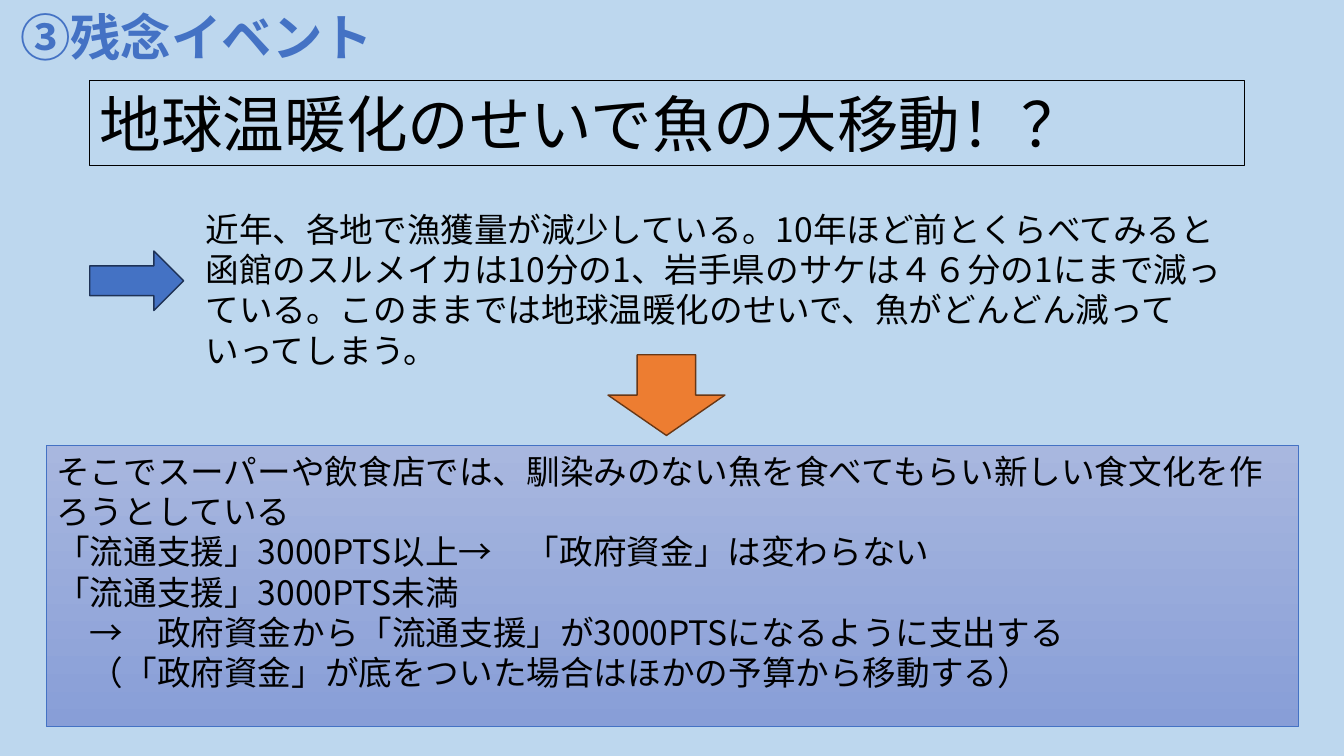
from dataclasses import dataclass

from pptx import Presentation
from pptx.dml.color import RGBColor
from pptx.enum.shapes import MSO_SHAPE
from pptx.enum.text import MSO_ANCHOR, MSO_AUTO_SIZE, PP_ALIGN
from pptx.oxml.ns import qn
from pptx.shapes.autoshape import Shape
from pptx.slide import Slide
from pptx.util import Emu, Inches, Pt

FONT = "Noto Sans CJK JP"
SLIDE_WIDTH, SLIDE_HEIGHT = Inches(13.33), Inches(7.5)
BLACK, BLUE, ORANGE, SKY = "000000", "4472C4", "ED7D31", "BDD7EE"


@dataclass(frozen=True)
class Frame:
    """A place on the slide, in percent of its width and height."""
    left: float
    top: float
    width: float
    height: float

    def lengths(self) -> tuple[Emu, Emu, Emu, Emu]:
        return (Emu(int(SLIDE_WIDTH * self.left / 100)),
                Emu(int(SLIDE_HEIGHT * self.top / 100)),
                Emu(int(SLIDE_WIDTH * self.width / 100)),
                Emu(int(SLIDE_HEIGHT * self.height / 100)))


@dataclass(frozen=True)
class Block:
    """A preset shape; fill holds no colour, one, or the two of a gradient."""
    frame: Frame
    preset: MSO_SHAPE = MSO_SHAPE.RECTANGLE
    fill: tuple[str, ...] = ()
    line: str = ""
    line_width: float = 1
    text: str = ""
    size: int = 24


TITLE_FRAME = Frame(0.75, 0.13, 96.4, 9.47)
MARGIN = 6.68

BLOCKS = [
    Block(Frame(MARGIN, 10.67, 85.9, 11.2), line=BLACK,
          text="地球温暖化のせいで魚の大移動！？", size=44),
    Block(Frame(14.55, 26.93, 77.04, 28.27),
          text="近年、各地で漁獲量が減少している。10年ほど前とくらべてみると"
               "函館のスルメイカは10分の1、岩手県のサケは４６分の1にまで減っている。"
               "このままでは地球温暖化のせいで、魚がどんどん減っていってしまう。"),
    Block(Frame(MARGIN, 33.2, 6.98, 7.87), MSO_SHAPE.RIGHT_ARROW, (BLUE,), "1E3256"),
    Block(Frame(45.24, 46.93, 8.7, 10.67), MSO_SHAPE.DOWN_ARROW, (ORANGE,), "683715"),
    Block(Frame(3.45, 58.93, 93.17, 37.2), fill=("A8B7DF", "889ED7"),
          line=BLUE, line_width=0.5,
          text="そこでスーパーや飲食店では、馴染みのない魚を食べてもらい"
               "新しい食文化を作ろうとしている\n"
               "「流通支援」3000PTS以上→　「政府資金」は変わらない\n"
               "「流通支援」3000PTS未満\n"
               "　→　政府資金から「流通支援」が3000PTSになるように支出する\n"
               "　（「政府資金」が底をついた場合はほかの予算から移動する）"),
]


def color(code: str) -> RGBColor:
    return RGBColor.from_string(code)


def write(box: Shape, text: str, size: int, ink: str, bold: bool = False) -> None:
    frame = box.text_frame
    frame.text = text
    frame.word_wrap = True
    frame.auto_size = MSO_AUTO_SIZE.NONE
    frame.vertical_anchor = MSO_ANCHOR.TOP
    for para in frame.paragraphs:
        para.alignment = PP_ALIGN.LEFT
        for span in para.runs:
            span.font.name = FONT
            span.font.size = Pt(size)
            span.font.bold = bold
            span.font.color.rgb = color(ink)
            # Japanese glyphs take their font from a:ea, right after a:latin
            latin = span.font._element.find(qn("a:latin"))
            east_asian = latin.makeelement(qn("a:ea"), {"typeface": FONT})
            latin.addnext(east_asian)


def paint(box: Shape, block: Block) -> None:
    if len(block.fill) == 2:
        box.fill.gradient()
        box.fill.gradient_angle = 270
        for stop, code in zip(box.fill.gradient_stops, block.fill):
            stop.color.rgb = color(code)
    elif block.fill:
        box.fill.solid()
        box.fill.fore_color.rgb = color(block.fill[0])
    else:
        box.fill.background()
    if block.line:
        box.line.color.rgb = color(block.line)
        box.line.width = Pt(block.line_width)
    else:
        box.line.fill.background()


def add_block(page: Slide, block: Block) -> None:
    place = block.frame.lengths()
    if block.fill or block.line:
        box = page.shapes.add_shape(block.preset, *place)
        box.shadow.inherit = False
        paint(box, block)
    else:
        box = page.shapes.add_textbox(*place)
    if block.text:
        write(box, block.text, block.size, BLACK)


def add_title(page: Slide, text: str) -> None:
    title = page.shapes.title
    title.left, title.top, title.width, title.height = TITLE_FRAME.lengths()
    write(title, text, 36, BLUE, bold=True)


def main() -> None:
    deck = Presentation()
    deck.slide_width, deck.slide_height = SLIDE_WIDTH, SLIDE_HEIGHT
    page = deck.slides.add_slide(deck.slide_layouts.get_by_name("Title Only"))
    page.background.fill.solid()
    page.background.fill.fore_color.rgb = color(SKY)
    add_title(page, "③残念イベント")
    for block in BLOCKS:
        add_block(page, block)
    deck.save("out.pptx")


if __name__ == "__main__":
    main()
